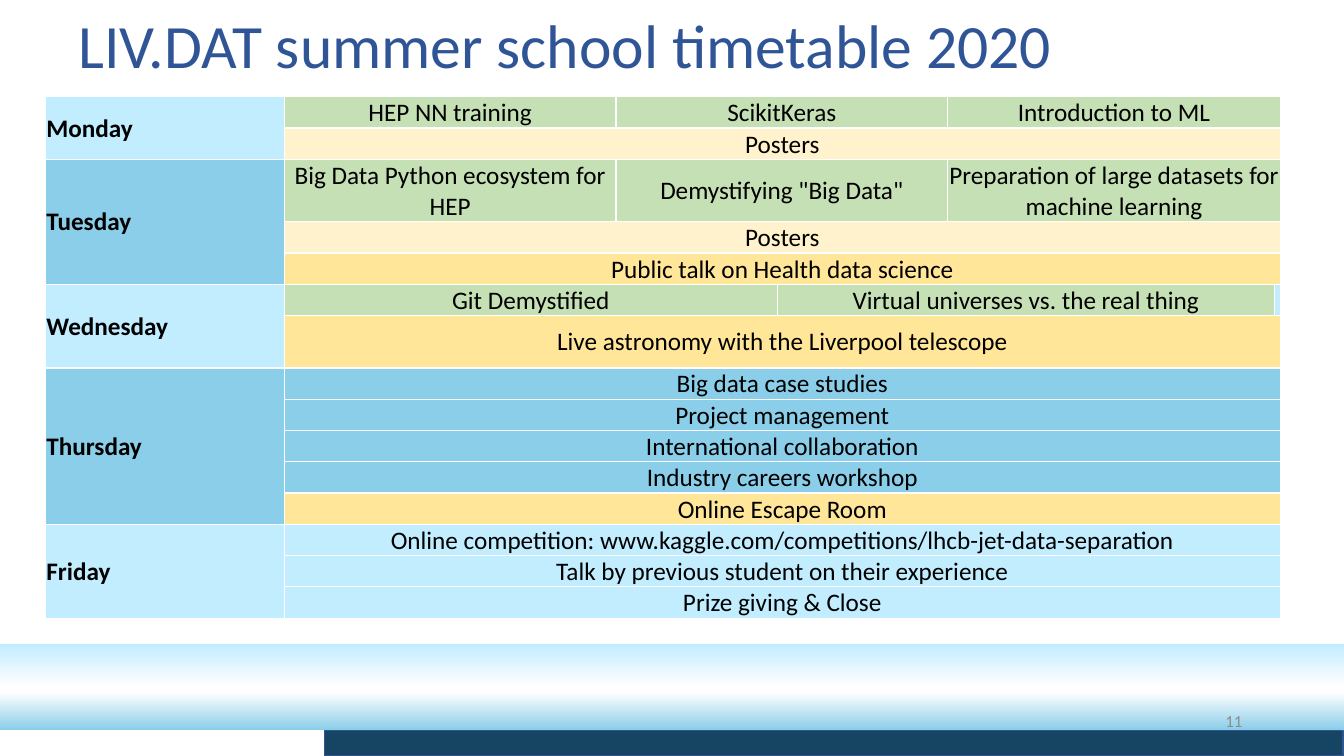
"""Build the summer school timetable slide."""
from pptx import Presentation
from pptx import util as u
from pptx.dml import color
from pptx.enum import shapes, text
from pptx.oxml import ns, parse_xml

NAMESPACE = ns.nsdecls("a")
ICE, SKY, GREEN, CREAM, GOLD = "C2EDFF", "8BCEE9", "C5E0B4", "FFF2CC", "FFE699"
NAVY, WHITE, BLACK = "164563", "FFFFFF", "000000"
COLUMNS = [2.37, 3.29, 1.6, 1.69, 3.24, 0.06]
ROW_HEIGHT = 0.31
TALL_ROWS = {2: 0.62, 6: 0.52}
THIRDS, HALVES, FULL = [1, 2, 2], [2, 2, 1], [5]
WEEK = [
    ("Monday", ICE, [
        (GREEN, THIRDS, ["HEP NN training", "ScikitKeras", "Introduction to ML"]),
        (CREAM, FULL, ["Posters"])]),
    ("Tuesday", SKY, [
        (GREEN, THIRDS, ["Big Data Python ecosystem for HEP", 'Demystifying "Big Data"',
                         "Preparation of large datasets for machine learning"]),
        (CREAM, FULL, ["Posters"]),
        (GOLD, FULL, ["Public talk on Health data science"])]),
    ("Wednesday", ICE, [
        (GREEN, HALVES, ["Git Demystified", "Virtual universes vs. the real thing", ""]),
        (GOLD, FULL, ["Live astronomy with the Liverpool telescope"])]),
    ("Thursday", SKY, [
        (SKY, FULL, ["Big data case studies"]),
        (SKY, FULL, ["Project management"]),
        (SKY, FULL, ["International collaboration"]),
        (SKY, FULL, ["Industry careers workshop"]),
        (GOLD, FULL, ["Online Escape Room"])]),
    ("Friday", ICE, [
        (ICE, FULL, ["Online competition: www.kaggle.com/competitions/lhcb-jet-data-separation"]),
        (ICE, FULL, ["Talk by previous student on their experience"]),
        (ICE, FULL, ["Prize giving & Close"])]),
]


def rgb(value):
    """Turn a hex string into a colour."""
    return color.RGBColor.from_string(value)


def outline(tag, value, points):
    """Return a solid line element."""
    return parse_xml(
        f'<a:{tag} {NAMESPACE} w="{int(u.Pt(points))}"><a:solidFill>'
        f'<a:srgbClr val="{value}"/></a:solidFill></a:{tag}>')


class TimetableSlide:
    """Draw styled elements on one slide."""

    font = "Calibri"

    def __init__(self, slide):
        """Keep the current slide."""
        self.slide = slide

    def add_words(self, frame, words, size, ink, align=text.PP_ALIGN.LEFT, bold=False):
        """Put one run in the first paragraph of a frame."""
        paragraph = frame.paragraphs[0]
        paragraph.alignment = align
        run = paragraph.add_run()
        run.text = words
        run.font.name, run.font.size, run.font.bold = self.font, u.Pt(size), bold
        run.font.color.rgb = rgb(ink)
        return paragraph, run

    def band(self, left, top, width, height):
        """Add a plain rectangle without line or shadow."""
        band = self.slide.shapes.add_shape(
            shapes.MSO_SHAPE.RECTANGLE, *map(u.Inches, (left, top, width, height)))
        band.shadow.inherit = False
        band.line.fill.background()
        return band

    def gradient_band(self, box, stops):
        """Add a rectangle shaded from top to bottom."""
        band = self.band(*box)
        band.fill.gradient()
        band.fill.gradient_angle = 270
        stop_list = next(band.element.iter(ns.qn("a:gsLst")))
        stop_list.clear()
        for percent, value in stops:
            stop_list.append(parse_xml(
                f'<a:gs {NAMESPACE} pos="{percent * 1000}"><a:srgbClr val="{value}"/></a:gs>'))

    def solid_band(self, box, fill, edge):
        """Add a rectangle with one fill and a thin line."""
        band = self.band(*box)
        band.fill.solid()
        band.fill.fore_color.rgb = rgb(fill)
        band.line.color.rgb = rgb(edge)
        band.line.width = u.Pt(1)

    def label(self, box, words, size, ink, align=text.PP_ALIGN.LEFT):
        """Add a text box centred vertically."""
        frame = self.slide.shapes.add_textbox(*map(u.Inches, box)).text_frame
        frame.word_wrap = True
        frame.vertical_anchor = text.MSO_ANCHOR.MIDDLE
        return self.add_words(frame, words, size, ink, align)

    def title(self, box, words):
        """Add the indented, outlined heading."""
        paragraph, run = self.label(box, words, 44, "2F5597")
        paragraph.line_spacing = 0.9
        properties = paragraph._p.get_or_add_pPr()
        properties.set("marL", str(int(u.Inches(0.68))))
        properties.set("indent", "0")
        run._r.get_or_add_rPr().insert(0, outline("ln", "4472C4", 0.75))

    def cell(self, cell, words, fill, align=text.PP_ALIGN.CENTER, bold=False):
        """Fill one table cell."""
        cell.fill.solid()
        cell.fill.fore_color.rgb = rgb(fill)
        if words:
            self.add_words(cell.text_frame, words, 18, BLACK, align, bold)

    def timetable(self, left, top, week):
        """Add the table of days and sessions."""
        row_count = sum(len(sessions) for _, _, sessions in week)
        heights = [TALL_ROWS.get(row, ROW_HEIGHT) for row in range(row_count)]
        table = self.slide.shapes.add_table(
            row_count, len(COLUMNS), u.Inches(left), u.Inches(top),
            u.Inches(sum(COLUMNS)), u.Inches(sum(heights))).table
        table.first_row = table.horz_banding = False
        for column, width in zip(table.columns, COLUMNS):
            column.width = u.Inches(width)
        for row, height in zip(table.rows, heights):
            row.height = u.Inches(height)
        for cell in table.iter_cells():
            cell.vertical_anchor = text.MSO_ANCHOR.MIDDLE
            cell.margin_left = cell.margin_right = cell.margin_top = u.Inches(0.01)
            cell.margin_bottom = 0
            for side in "LRTB":
                cell._tc.get_or_add_tcPr().append(outline(f"ln{side}", WHITE, 1))
        row = 0
        for day, day_fill, sessions in week:
            day_cell = table.cell(row, 0)
            day_cell.merge(table.cell(row + len(sessions) - 1, 0))
            self.cell(day_cell, day, day_fill, text.PP_ALIGN.LEFT, True)
            for fill, spans, names in sessions:
                column = 1
                for span, name in zip(spans, names):
                    session = table.cell(row, column)
                    if span > 1:
                        session.merge(table.cell(row, column + span - 1))
                    self.cell(session, name, fill if name else day_fill)
                    column += span
                row += 1


def main():
    """Build and save the slide."""
    deck = Presentation()
    deck.slide_width, deck.slide_height = u.Inches(13.33), u.Inches(7.5)
    page = TimetableSlide(deck.slides.add_slide(deck.slide_layouts[6]))
    page.gradient_band((0, 6.39, 13.33, 0.85), [(0, ICE), (50, WHITE), (56, WHITE), (100, SKY)])
    page.solid_band((3.22, 7.25, 10.1, 0.25), NAVY, "325491")
    page.title((0, 0, 13.33, 0.96), "LIV.DAT summer school timetable 2020")
    page.timetable(0.45, 0.96, WEEK)
    page.label((9.42, 6.95, 3, 0.4), "11", 12, "8C8C8C", text.PP_ALIGN.RIGHT)
    deck.save("out.pptx")


if __name__ == "__main__":
    main()
